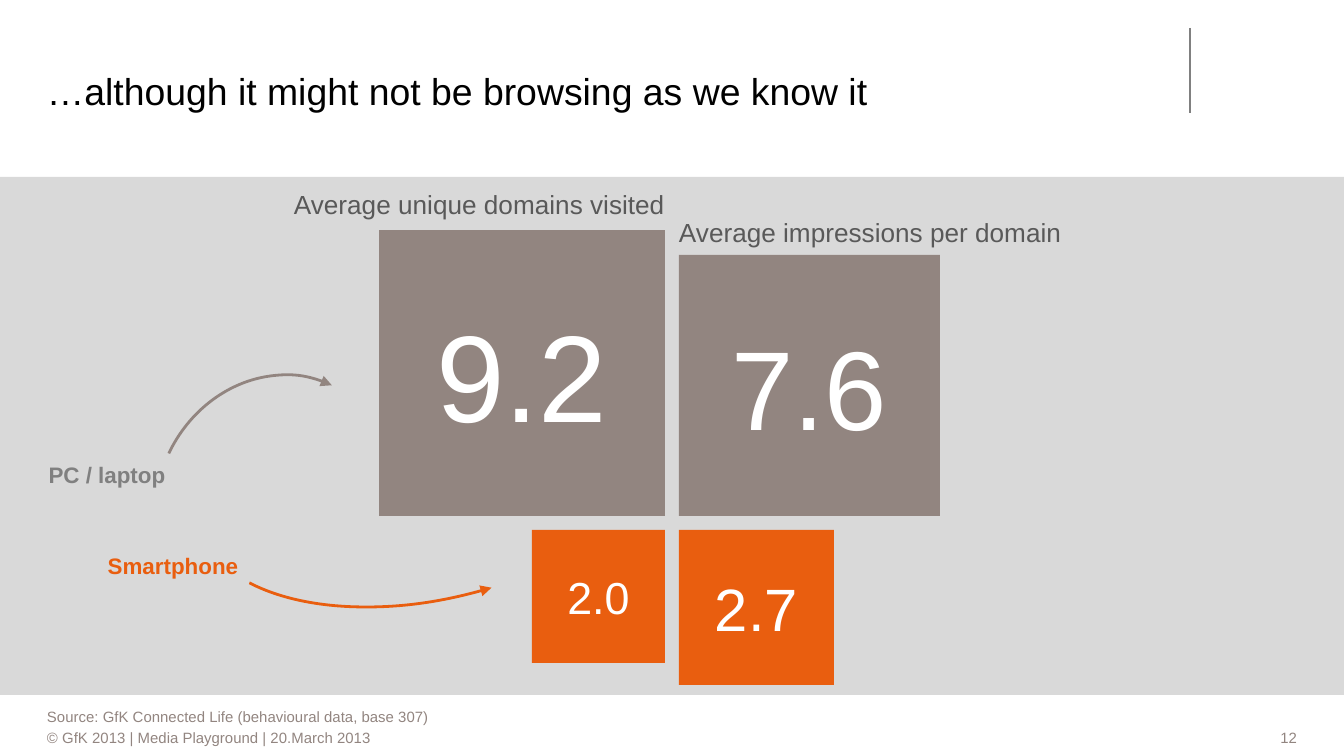
from dataclasses import dataclass

from pptx import Presentation
from pptx import util as u
from pptx.dml.color import RGBColor
from pptx.enum import shapes, text
from pptx.oxml.ns import qn
from pptx.oxml.xmlchemy import OxmlElement

EMU_PER_PX = 914400 / 134.4
WIDTH, HEIGHT = 1344, 756

WHITE = RGBColor(0xFF, 0xFF, 0xFF)
BLACK = RGBColor(0x00, 0x00, 0x00)
BAND_GREY = RGBColor(0xD9, 0xD9, 0xD9)
RULE_GREY = RGBColor(0x80, 0x80, 0x80)
HEADING_GREY = RGBColor(0x59, 0x59, 0x59)
TAUPE = RGBColor(0x92, 0x85, 0x80)
ORANGE = RGBColor(0xE9, 0x5E, 0x0F)

LEFT, CENTER, RIGHT = text.PP_ALIGN.LEFT, text.PP_ALIGN.CENTER, text.PP_ALIGN.RIGHT

# The four squares meet at a central cross of gaps
LEFT_COLUMN_END, RIGHT_COLUMN_START = 665, 679
PC_ROW_END, PHONE_ROW_START = 516, 530


@dataclass
class Label:
    wording: str
    box: tuple[int, int, int, int]
    size: int
    color: RGBColor
    align: text.PP_ALIGN = LEFT
    bold: bool = False


@dataclass
class Square:
    value: str
    side: int
    size: int
    is_pc: bool
    is_left: bool


@dataclass
class Arrow:
    box: tuple[int, int, int, int]
    rotation: float
    color: RGBColor
    start: float = 162.0
    mirrored: bool = False


LABELS = [
    Label("Smartphone", (107, 523, 132, 85), 12, ORANGE, CENTER, True),
    Label("PC / laptop", (41, 432, 132, 85), 12, RULE_GREY, CENTER, True),
    Label("Average unique domains visited", (244, 179, 421, 51), 14, HEADING_GREY, RIGHT),
    Label("Average impressions per domain", (679, 207, 421, 51), 14, HEADING_GREY),
    Label("Source: GfK Connected Life (behavioural data, base 307)",
          (47, 706, 1038, 21), 8, TAUPE),
    Label("© GfK 2013 | Media Playground | 20.March 2013", (47, 727, 1038, 21), 8, TAUPE),
    Label("12", (1106, 727, 191, 21), 8, TAUPE, RIGHT),
]

SQUARES = [
    Square("2.0", 133, 24, is_pc=False, is_left=True),
    Square("2.7", 155, 32, is_pc=False, is_left=False),
    Square("9.2", 286, 66, is_pc=True, is_left=True),
    Square("7.6", 261, 60, is_pc=True, is_left=False),
]

ARROWS = [
    Arrow((144, 386, 263, 236), 295.4, TAUPE),
    Arrow((301, 180, 296, 532), 253.3, ORANGE, start=172.646, mirrored=True),
]


def px(length: int) -> u.Emu:
    return u.Emu(round(length * EMU_PER_PX))


def place(box: tuple[int, int, int, int]) -> list[u.Emu]:
    return [px(length) for length in box]


def write(frame, wording: str, size: int, color: RGBColor, align=LEFT,
          bold: bool = False, anchor=text.MSO_ANCHOR.MIDDLE) -> None:
    frame.margin_left = frame.margin_right = frame.margin_top = frame.margin_bottom = 0
    frame.word_wrap = True
    frame.auto_size = text.MSO_AUTO_SIZE.NONE
    frame.vertical_anchor = anchor
    frame.text = wording
    paragraph = frame.paragraphs[0]
    paragraph.alignment = align
    font = paragraph.runs[0].font
    font.name, font.size, font.bold = "Arial", u.Pt(size), bold
    font.color.rgb = color


def add_block(slide, box: tuple[int, int, int, int], color: RGBColor):
    block = slide.shapes.add_shape(shapes.MSO_SHAPE.RECTANGLE, *place(box))
    block.shadow.inherit = False
    block.fill.solid()
    block.fill.fore_color.rgb = color
    block.line.fill.background()
    return block


def add_label(slide, label: Label) -> None:
    caption = slide.shapes.add_textbox(*place(label.box))
    write(caption.text_frame, label.wording, label.size, label.color, label.align, label.bold)


def add_square(slide, square: Square) -> None:
    left = LEFT_COLUMN_END - square.side if square.is_left else RIGHT_COLUMN_START
    top = PC_ROW_END - square.side if square.is_pc else PHONE_ROW_START
    block = add_block(slide, (left, top, square.side, square.side),
                      TAUPE if square.is_pc else ORANGE)
    write(block.text_frame, square.value, square.size, WHITE, CENTER)


def add_arrow(slide, arrow: Arrow) -> None:
    arc = slide.shapes.add_shape(shapes.MSO_SHAPE.ARC, *place(arrow.box))
    arc.shadow.inherit = False
    arc.adjustments[0] = arrow.start
    arc.rotation = arrow.rotation
    arc.fill.background()
    arc.line.color.rgb = arrow.color
    arc.line.width = u.Pt(1.5)
    properties = arc.element.spPr
    if arrow.mirrored:
        properties.find(qn("a:xfrm")).set("flipH", "1")
    head = OxmlElement("a:tailEnd")
    head.set("type", "triangle")
    properties.find(qn("a:ln")).append(head)


def add_rule(slide, x: int, top: int, bottom: int) -> None:
    rule = slide.shapes.add_connector(shapes.MSO_CONNECTOR.STRAIGHT,
                                      px(x), px(top), px(x), px(bottom))
    rule.line.color.rgb = RULE_GREY
    rule.line.width = u.Pt(0.75)
    rule.element.spPr.append(OxmlElement("a:effectLst"))


def main() -> None:
    deck = Presentation()
    deck.slide_width, deck.slide_height = px(WIDTH), px(HEIGHT)
    slide = deck.slides.add_slide(deck.slide_layouts[5])

    # Header
    title = slide.shapes.title
    title.left, title.top, title.width, title.height = place((47, 28, 942, 85))
    write(title.text_frame, "…although it might not be browsing as we know it",
          20, BLACK, anchor=text.MSO_ANCHOR.BOTTOM)
    add_rule(slide, 1190, 28, 113)

    # Grey band with squares, captions and pointers
    add_block(slide, (0, 177, WIDTH, 518), BAND_GREY)
    for label in LABELS:
        add_label(slide, label)
    for square in SQUARES:
        add_square(slide, square)
    for arrow in ARROWS:
        add_arrow(slide, arrow)

    deck.save("out.pptx")


if __name__ == "__main__":
    main()
